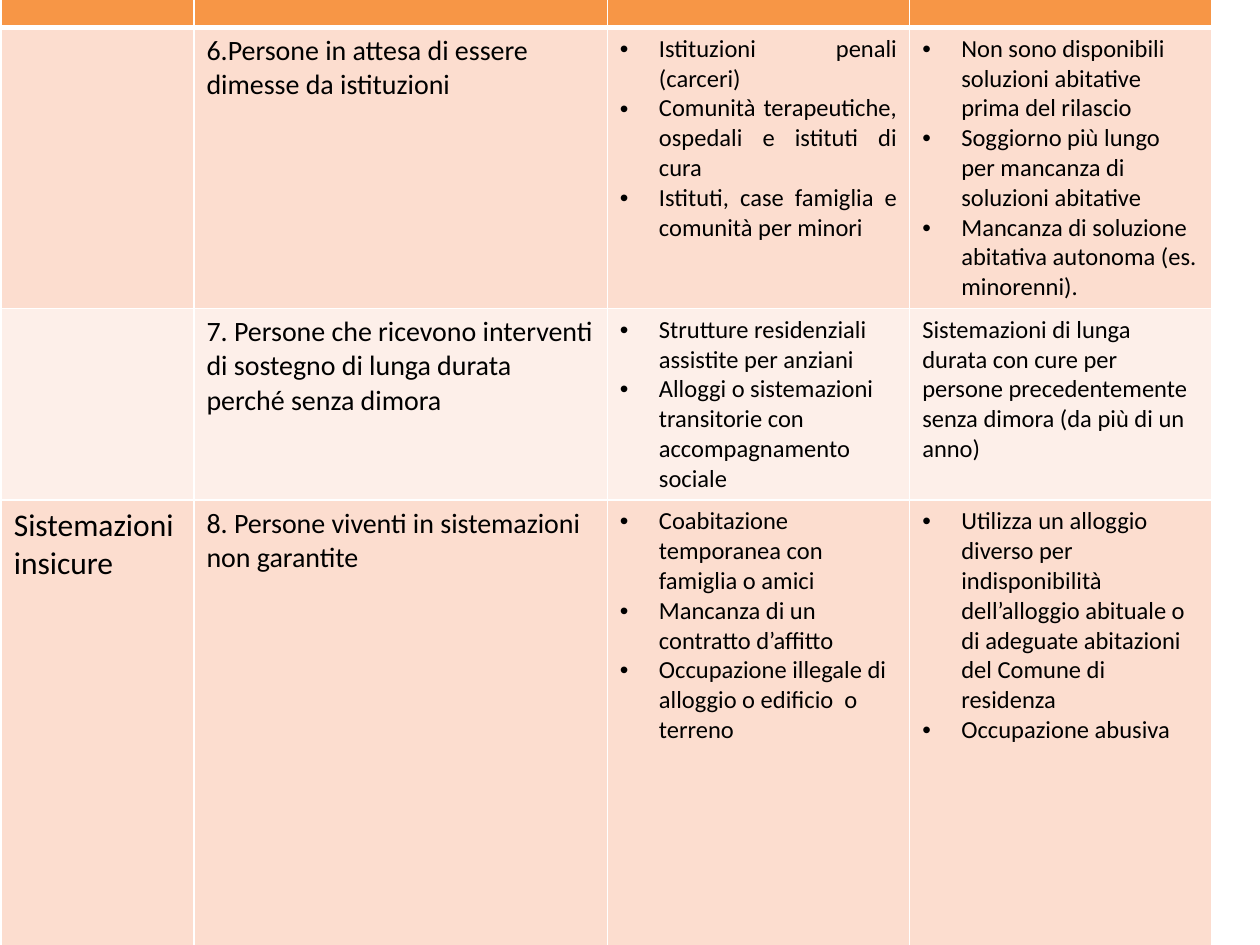
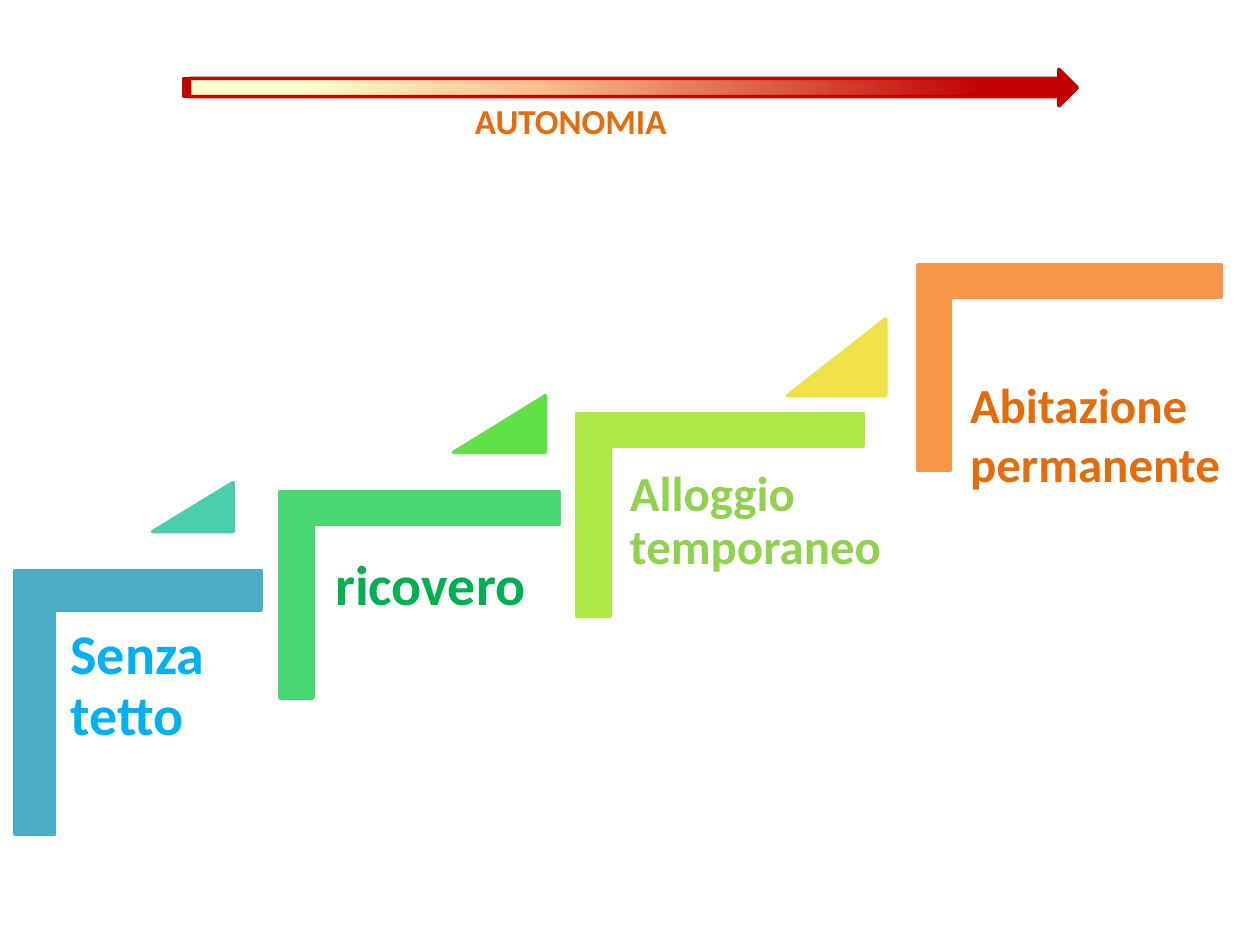
from copy import deepcopy

from lxml.etree import SubElement
from pptx import Presentation
from pptx.dml.color import RGBColor
from pptx.enum.shapes import MSO_SHAPE
from pptx.enum.text import PP_ALIGN
from pptx.oxml.ns import qn
from pptx.util import Inches, Pt

FONT = "Calibri"
COLORS = {
    "text": "000000", "white": "FFFFFF",
    "header": "F79646", "dark_row": "FCDDCF", "light_row": "FDEFE9",
    "blue": "4BACC6", "green": "47D872", "lime": "ACE946", "orange": "F79646",
    "teal": "49CFAE", "grass": "60E146", "yellow": "F0E146",
    "blue_text": "00B0F0", "green_text": "00B050",
    "lime_text": "92D050", "orange_text": "E46C0A",
    "cream": "FFFFCC", "peach": "FAC090", "red": "C00000",
}

# Housing table: category, persons, living situation, definition
COLUMN_WIDTHS = (1.53, 3.28, 2.4, 2.4)
ROW_HEIGHTS = (0.41, 2.22, 1.52, 3.72)
COLUMN_SIZES = (18, 16, 14, 14)
JUSTIFIED_CELL = (1, 2)
BULLET_INDENT = 0.31
HOUSING_ROWS = [
    ("", "", "", ""),
    ("", "6.Persone in attesa di essere dimesse da istituzioni",
     ["Istituzioni penali (carceri)",
      "Comunità terapeutiche, ospedali e istituti di cura",
      "Istituti, case famiglia e comunità per minori"],
     ["Non sono disponibili soluzioni abitative prima del rilascio",
      "Soggiorno più lungo per mancanza di soluzioni abitative",
      "Mancanza di soluzione abitativa autonoma (es. minorenni)."]),
    ("", "7. Persone che ricevono interventi di sostegno di lunga durata "
         "perché senza dimora",
     ["Strutture residenziali assistite per anziani",
      "Alloggi o sistemazioni transitorie con accompagnamento sociale"],
     "Sistemazioni di lunga durata con cure per persone precedentemente "
     "senza dimora (da più di un anno)"),
    ("Sistemazioni insicure", "8. Persone viventi in sistemazioni non garantite",
     ["Coabitazione temporanea con famiglia o amici",
      "Mancanza di un contratto d’affitto",
      "Occupazione illegale di alloggio o edificio  o terreno"],
     ["Utilizza un alloggio diverso per indisponibilità dell’alloggio abituale "
      "o di adeguate abitazioni del Comune di residenza",
      "Occupazione abusiva"]),
]

# Steps: box of the bracket, label and rise triangle relative to that box
STEPS = [
    {"box": (0.12, 4.53, 1.95, 2.09), "color": "blue",
     "lines": ["Senza tetto"], "label": (0.31, 0.31, 2.05, 1.8),
     "size": 32, "inset": 0.13, "spacing": 0.9,
     "rise": (1.09, -0.7, 0.64, 0.39), "rise_color": "teal"},
    {"box": (2.22, 3.9, 2.22, 1.64), "color": "green",
     "lines": ["ricovero"], "label": (0.31, 0.39, 2.05, 1.8),
     "size": 32, "inset": 0.13, "spacing": 0.9,
     "rise": (1.38, -0.76, 0.73, 0.45), "rise_color": "grass"},
    {"box": (4.58, 3.28, 2.27, 1.61), "color": "lime",
     "lines": ["Alloggio temporaneo"], "label": (0.3, 0.32, 2.5, 1.85),
     "size": 28, "inset": 0.12, "spacing": 0.9,
     "rise": (1.67, -0.75, 0.78, 0.61), "rise_color": "yellow"},
    {"box": (7.28, 2.1, 2.41, 1.63), "color": "orange",
     "lines": ["Abitazione", "permanente"], "label": (0.32, 0.77, 2.21, 1.04),
     "size": 28, "inset": 0.1, "spacing": 1.0, "wrap": False},
]
BRACKET_THICKNESS = 0.161


def rgb(name):
    return RGBColor.from_string(COLORS[name])


def inches(box):
    return [Inches(length) for length in box]


def apply_format(target, formats):
    for attribute, value in formats.items():
        setattr(target, attribute, value)


def write_lines(frame, lines, size, color, bold=False, **paragraph_formats):
    for index, line in enumerate(lines):
        paragraph = frame.paragraphs[0] if index == 0 else frame.add_paragraph()
        apply_format(paragraph, paragraph_formats)
        run = paragraph.add_run()
        run.text = line
        apply_format(run.font, {"name": FONT, "size": Pt(size), "bold": bold})
        run.font.color.rgb = rgb(color)


def add_label(slide, box, lines, size, color, inset=0.1, wrap=True, **formats):
    frame = slide.shapes.add_textbox(*inches(box)).text_frame
    margins = ("margin_left", "margin_top", "margin_right", "margin_bottom")
    apply_format(frame, {margin: Inches(inset) for margin in margins})
    frame.word_wrap = wrap
    write_lines(frame, lines, size, color, bold=True, **formats)
    return frame


def add_outlined(slide, preset, box, line_color):
    shape = slide.shapes.add_shape(preset, *inches(box))
    shape.shadow.inherit = False
    shape.line.color.rgb = rgb(line_color)
    shape.line.width = Pt(2)
    return shape


def add_solid(slide, preset, box, color, adjustments):
    shape = add_outlined(slide, preset, box, color)
    shape.fill.solid()
    shape.fill.fore_color.rgb = rgb(color)
    for index, value in enumerate(adjustments):
        shape.adjustments[index] = value
    return shape


def set_borders(cell, bottom_width):
    properties = cell._tc.get_or_add_tcPr()
    for side, width in (("L", 1), ("R", 1), ("T", 1), ("B", bottom_width)):
        border = SubElement(properties, qn(f"a:ln{side}"), w=str(Pt(width)))
        fill = SubElement(border, qn("a:solidFill"))
        SubElement(fill, qn("a:srgbClr"), val=COLORS["white"])


def add_bullets(frame):
    for paragraph in frame.paragraphs:
        properties = paragraph._p.get_or_add_pPr()
        properties.set("marL", str(Inches(BULLET_INDENT)))
        properties.set("indent", str(-Inches(BULLET_INDENT)))
        SubElement(properties, qn("a:buFont"), typeface="Arial")
        SubElement(properties, qn("a:buChar"), char="•")


def fill_cell(cell, content, row, column):
    set_borders(cell, 3 if row == 0 else 1)
    cell.fill.solid()
    band = "header" if row == 0 else "dark_row" if row % 2 else "light_row"
    cell.fill.fore_color.rgb = rgb(band)
    if not content:
        return
    bulleted = isinstance(content, list)
    justified = (row, column) == JUSTIFIED_CELL
    write_lines(cell.text_frame, content if bulleted else [content],
                COLUMN_SIZES[column], "text",
                alignment=PP_ALIGN.JUSTIFY if justified else PP_ALIGN.LEFT)
    if bulleted:
        add_bullets(cell.text_frame)


def add_housing_table(slide, left, top):
    box = (left, top, sum(COLUMN_WIDTHS), sum(ROW_HEIGHTS))
    table = slide.shapes.add_table(
        len(ROW_HEIGHTS), len(COLUMN_WIDTHS), *inches(box)).table
    for column, width in zip(table.columns, COLUMN_WIDTHS):
        column.width = Inches(width)
    for row, height in zip(table.rows, ROW_HEIGHTS):
        row.height = Inches(height)
    for row, contents in enumerate(HOUSING_ROWS):
        for column, content in enumerate(contents):
            fill_cell(table.cell(row, column), content, row, column)


def add_step(slide, step):
    left, top, width, height = step["box"]

    def place(part):
        return (left + part[0], top + part[1], part[2], part[3])

    # Bracket: a corner turned by 90 degrees about the centre of the box
    shift = (width - height) / 2
    bracket = add_solid(slide, MSO_SHAPE.CORNER,
                        (left + shift, top - shift, height, width),
                        step["color"], [BRACKET_THICKNESS] * 2)
    bracket.rotation = 90
    add_label(slide, place(step["label"]), step["lines"], step["size"],
              step["color"] + "_text", step["inset"], step.get("wrap", True),
              line_spacing=step["spacing"])
    # Rise towards the next step
    if "rise" in step:
        add_solid(slide, MSO_SHAPE.ISOSCELES_TRIANGLE, place(step["rise"]),
                  step["rise_color"], [1])


def add_autonomy_arrow(slide, left, top, width, height):
    arrow = add_outlined(slide, MSO_SHAPE.STRIPED_RIGHT_ARROW,
                         (left, top, width, height), "red")
    arrow.fill.gradient()
    arrow.fill.gradient_angle = 0
    stop_list = arrow._element.spPr.find(".//" + qn("a:gsLst"))
    stop_list.append(deepcopy(stop_list[0]))
    shades = ((0.13, "cream"), (0.39, "peach"), (0.9, "red"))
    for stop, (position, color) in zip(arrow.fill.gradient_stops, shades):
        stop.position = position
        stop.color.rgb = rgb(color)
    caption = add_label(slide, (left + 0.71, top + 0.14, 4.8, 0.5),
                        ["AUTONOMIA"], 20, "orange_text")
    caption.margin_left = Inches(1.6)


def build_table_slide(slide):
    add_housing_table(slide, 0.01, -0.19)


def build_steps_slide(slide):
    for step in STEPS:
        add_step(slide, step)
    add_autonomy_arrow(slide, 1.46, 0.55, 7.09, 0.29)


def main():
    presentation = Presentation()
    apply_format(presentation, {"slide_width": Inches(10),
                                "slide_height": Inches(7.5)})
    blank = presentation.slide_layouts[6]
    for build in (build_table_slide, build_steps_slide):
        build(presentation.slides.add_slide(blank))
    presentation.save("out.pptx")


if __name__ == "__main__":
    main()
